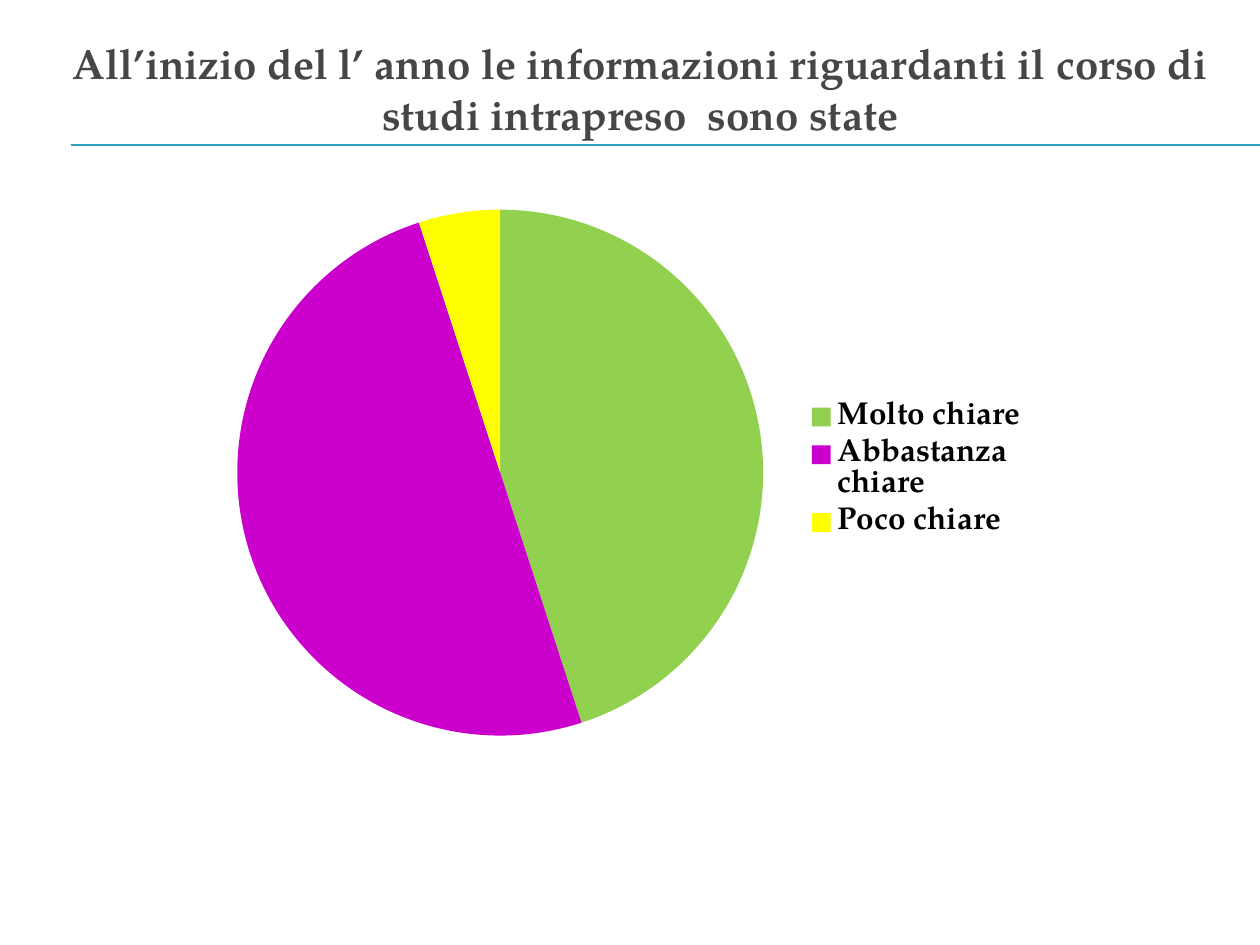
import pptx
import pptx.chart.data
import pptx.dml.color
import pptx.enum.chart
import pptx.enum.shapes
import pptx.enum.text
import pptx.oxml
import pptx.oxml.ns
import pptx.util
from pptx.util import Cm

FONT = "TeX Gyre Pagella"
SLICES = [
    ("Molto chiare", 45, "92D050"),
    ("Abbastanza chiare", 50, "CC00CC"),
    ("Poco chiare", 5, "FFFF00"),
]


def rgb(value):
    return pptx.dml.color.RGBColor.from_string(value)


def format_font(font, size, color, bold=False):
    font.name = FONT
    font.size = pptx.util.Pt(size)
    font.bold = bold
    font.color.rgb = rgb(color)


def add_text(s, text, x, y, w, h, size=18, color="000000", bold=False):
    """Add a text box, centred both ways."""
    tf = s.shapes.add_textbox(Cm(x), Cm(y), Cm(w), Cm(h)).text_frame
    tf.word_wrap = True
    tf.vertical_anchor = pptx.enum.text.MSO_ANCHOR.MIDDLE
    p = tf.paragraphs[0]
    p.alignment = pptx.enum.text.PP_ALIGN.CENTER
    r = p.add_run()
    r.text = text
    format_font(r.font, size, color, bold)


def add_rule(s, x1, x2, y, color, width):
    """Add a horizontal line without a shadow."""
    line = s.shapes.add_connector(
        pptx.enum.shapes.MSO_CONNECTOR.STRAIGHT, Cm(x1), Cm(y), Cm(x2), Cm(y))
    line.line.color.rgb = rgb(color)
    line.line.width = pptx.util.Pt(width)
    line._element.spPr.append(pptx.oxml.parse_xml(
        f'<a:effectLst {pptx.oxml.ns.nsdecls("a")}/>'))


def make_layout(x, y, w, h, inner=False):
    """Return a manual chart layout in fractions of the chart's size."""
    target = '<c:layoutTarget val="inner"/>' if inner else ""
    return pptx.oxml.parse_xml(
        f'<c:layout {pptx.oxml.ns.nsdecls("c")}><c:manualLayout>{target}'
        '<c:xMode val="edge"/><c:yMode val="edge"/>'
        f'<c:x val="{x}"/><c:y val="{y}"/><c:w val="{w}"/><c:h val="{h}"/>'
        '</c:manualLayout></c:layout>')


def add_pie(s, x, y, w, h):
    data = pptx.chart.data.CategoryChartData()
    data.categories = [name for name, _, _ in SLICES]
    data.add_series("Series 1", [value for _, value, _ in SLICES])
    chart = s.shapes.add_chart(
        pptx.enum.chart.XL_CHART_TYPE.PIE,
        Cm(x), Cm(y), Cm(w), Cm(h), data).chart
    chart.has_title = False
    format_font(chart.font, 18, "000000")

    plot = chart.plots[0]
    plot.vary_by_categories = True
    for i, (_, _, color) in enumerate(SLICES):
        fill = plot.series[0].points[i].format.fill
        fill.solid()
        fill.fore_color.rgb = rgb(color)

    chart.has_legend = True
    legend = chart.legend
    legend.position = pptx.enum.chart.XL_LEGEND_POSITION.RIGHT
    legend.include_in_layout = True
    format_font(legend.font, 18, "000000", bold=True)

    c_legend = legend._element
    plot_area = chart._chartSpace.chart.plotArea
    for parent in (c_legend, plot_area):
        for old in parent.findall(pptx.oxml.ns.qn("c:layout")):
            parent.remove(old)
    c_legend.insert(1, make_layout(0.7, 0.36, 0.28, 0.27))
    plot_area.insert(0, make_layout(0.03, 0.03, 0.63, 0.94, inner=True))


def main():
    prs = pptx.Presentation()
    prs.slide_width, prs.slide_height = Cm(25.4), Cm(19.05)
    s = prs.slides.add_slide(prs.slide_layouts[6])
    for y in (2.92, 2.94):
        add_rule(s, 1.43, 25.4, y, "2DA2BF", 0.75)
    add_text(
        s,
        "All’inizio del l’ anno le informazioni riguardanti il corso di "
        "studi intrapreso  sono state",
        0.84, 0.58, 24.13, 2.4, size=24, color="464646", bold=True)
    add_pie(s, 4.24, 3.89, 16.94, 11.28)
    prs.save("out.pptx")


if __name__ == "__main__":
    main()
